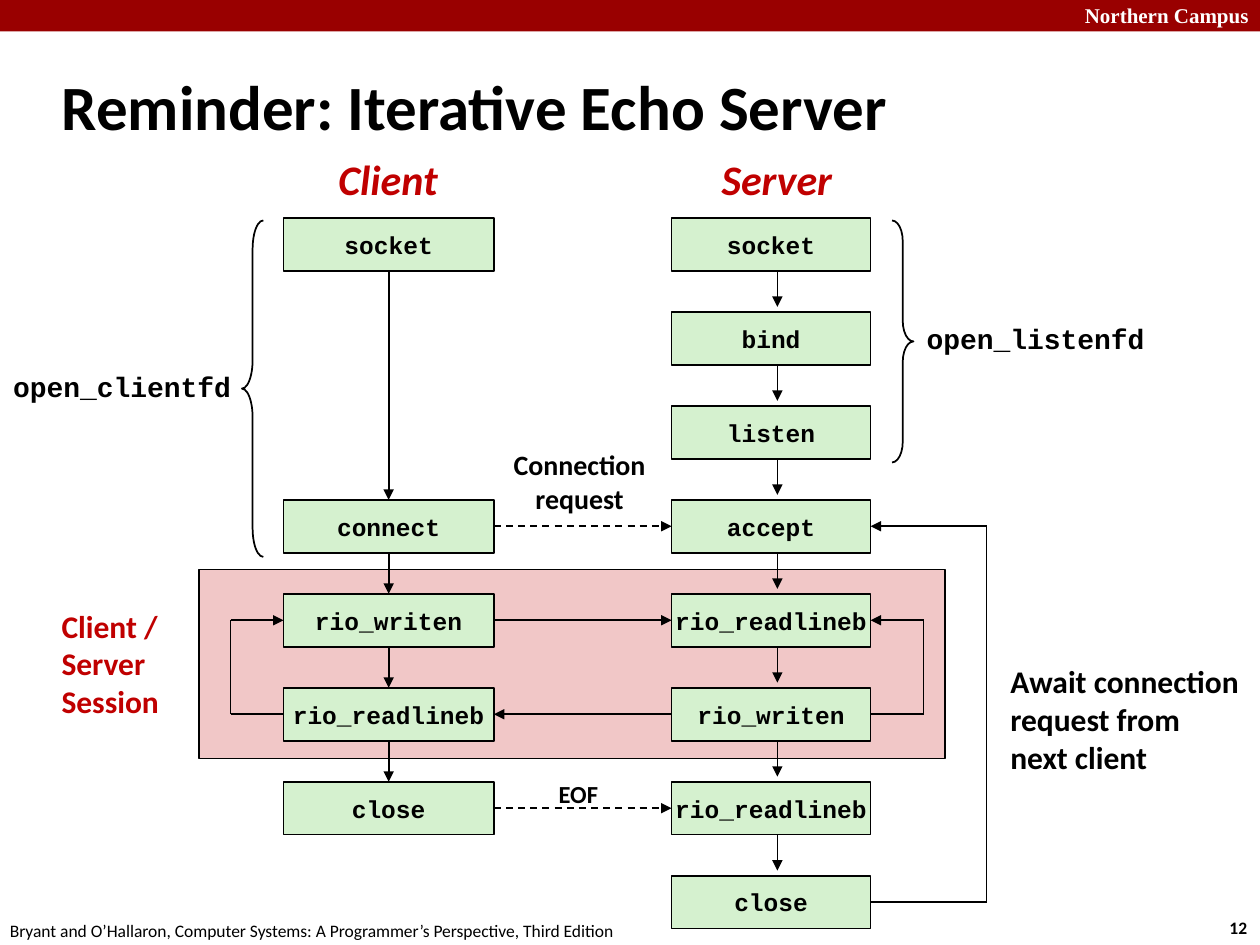
import pptx
import pptx.util
import pptx.oxml.ns
from lxml import etree
from pptx.dml.color import RGBColor
from pptx.enum.dml import MSO_LINE
from pptx.enum.shapes import MSO_CONNECTOR, MSO_SHAPE
from pptx.enum.text import MSO_ANCHOR, PP_ALIGN

BLACK = RGBColor(0x00, 0x00, 0x00)
WHITE = RGBColor(0xFF, 0xFF, 0xFF)
BANNER_RED = RGBColor(0x99, 0x00, 0x00)
RED = RGBColor(0xC0, 0x00, 0x00)
PINK = RGBColor(0xF1, 0xC7, 0xC7)
GREEN = RGBColor(0xD5, 0xF1, 0xCF)
SANS, MONO, SERIF = "Calibri", "Courier New", "Times New Roman"
LEFT, CENTER, RIGHT = PP_ALIGN.LEFT, PP_ALIGN.CENTER, PP_ALIGN.RIGHT

TITLE = "Reminder: Iterative Echo Server"
CLIENT = {0: "socket", 3: "connect", 4: "rio_writen", 5: "rio_readlineb", 6: "close"}
SERVER = dict(enumerate(["socket", "bind", "listen", "accept", "rio_readlineb",
                         "rio_writen", "rio_readlineb", "close"]))
MESSAGES = [("client", "server", 3, True), ("client", "server", 4, False),
            ("server", "client", 5, False), ("client", "server", 6, True)]
LOOPS = [("client", 5, 4, 1.83), ("server", 5, 4, 7.33), ("server", 7, 3, 7.83)]
BRACES = [(MSO_SHAPE.LEFT_BRACE, (1.92, 1.75, 0.17, 2.67), 1.33),
          (MSO_SHAPE.RIGHT_BRACE, (7.08, 1.75, 0.17, 1.92), 0.96)]
LABELS = [
    ("Northern Campus", (8.01, -0.03, 2, 0.3), 12, SERIF, WHITE, RIGHT),
    ("12", (9.66, 7.23, 0.37, 0.27), 10, SANS, BLACK, LEFT),
    ("Client / Server\nSession", (0.39, 4.76, 1.03, 1.01), 18, SANS, RED, LEFT),
    ("Client", (2.58, 1.17, 1, 0.5), 24, SANS, RED, CENTER),
    ("Server", (5.62, 1.17, 1.09, 0.5), 24, SANS, RED, CENTER),
    ("Connection\nrequest", (3.97, 3.5, 1.26, 0.64), 16, SANS, BLACK, CENTER),
    ("EOF", (4.33, 6.13, 0.52, 0.34), 14, SANS, BLACK, CENTER),
    ("Await connection\nrequest from\nnext client", (7.92, 5.2, 2.03, 1.01),
     18, SANS, BLACK, LEFT),
    ("open_listenfd", (7.25, 2.5, 1.94, 0.37), 16, MONO, BLACK, CENTER),
    ("open_clientfd", (0, 2.88, 1.94, 0.37), 16, MONO, BLACK, CENTER),
]
FOOTER = ("Bryant and O’Hallaron, Computer Systems: "
          "A Programmer’s Perspective, Third Edition")
COLUMNS = {"client": (2.25, 1.67, CLIENT), "server": (5.33, 1.58, SERVER)}
ROW_TOP, ROW_PITCH, BOX_H = 1.73, 5.22 / 7, 0.42
SERVER_ARROW_X, ARROW_GAP = 6.17, 0.04

prs = pptx.Presentation()
prs.slide_width, prs.slide_height = pptx.util.Inches(10), pptx.util.Inches(7.5)
s = prs.slides.add_slide(prs.slide_layouts[5])


def inches(values):
    return [pptx.util.Inches(v) for v in values]


def write(sp, text, size, font, color, align, bold=True, italic=False, wrap=False):
    tf = sp.text_frame
    tf.text = text
    tf.word_wrap = wrap
    tf.vertical_anchor = MSO_ANCHOR.MIDDLE
    for p in tf.paragraphs:
        p.alignment = align
        for r in p.runs:
            r.font.size, r.font.name = pptx.util.Pt(size), font
            r.font.bold, r.font.italic = bold, italic
            r.font.color.rgb = color


def add_shape(kind, box, fill=None, outlined=True):
    sp = s.shapes.add_shape(kind, *inches(box))
    sp.shadow.inherit = False
    if fill is None:
        sp.fill.background()
    else:
        sp.fill.solid()
        sp.fill.fore_color.rgb = fill
    if outlined:
        sp.line.color.rgb, sp.line.width = BLACK, pptx.util.Pt(1)
    else:
        sp.line.fill.background()
    return sp


def add_line(start, end, arrow=True, dashed=False, begin=None, finish=None):
    c = s.shapes.add_connector(MSO_CONNECTOR.STRAIGHT, *inches(start + end))
    c.line.color.rgb, c.line.width = BLACK, pptx.util.Pt(1)
    if dashed:
        c.line.dash_style = MSO_LINE.DASH
    if arrow:
        tail = etree.SubElement(c.line._get_or_add_ln(), pptx.oxml.ns.qn("a:tailEnd"))
        tail.set("type", "triangle")
    etree.SubElement(c._element.spPr, pptx.oxml.ns.qn("a:effectLst"))
    if begin:
        c.begin_connect(*begin)
    if finish:
        c.end_connect(*finish)


def row_top(row):
    return ROW_TOP + row * ROW_PITCH


def side(name, row, right):
    x, w, _ = COLUMNS[name]
    return (x + w * right, row_top(row) + BOX_H / 2)


title = s.shapes.title
title.left, title.top, title.width, title.height = inches((0.39, 0.42, 8.3, 0.83))
write(title, TITLE, 36, SANS, BLACK, LEFT, wrap=True)

add_shape(MSO_SHAPE.RECTANGLE, (0, 0, 10, 0.25), BANNER_RED, outlined=False)
add_shape(MSO_SHAPE.RECTANGLE, (1.58, 4.52, 5.92, 1.5), PINK)

boxes = {}
for name, (x, w, calls) in COLUMNS.items():
    for row, call in calls.items():
        sp = add_shape(MSO_SHAPE.RECTANGLE, (x, row_top(row), w, BOX_H), GREEN)
        write(sp, call, 14, MONO, BLACK, CENTER)
        boxes[name, row] = sp

client_rows = list(CLIENT)
client_x = COLUMNS["client"][0] + COLUMNS["client"][1] / 2
for a, b in zip(client_rows, client_rows[1:]):
    add_line((client_x, row_top(a) + BOX_H), (client_x, row_top(b)),
             begin=(boxes["client", a], 2), finish=(boxes["client", b], 0))
for row in range(len(SERVER) - 1):
    add_line((SERVER_ARROW_X, row_top(row) + BOX_H),
             (SERVER_ARROW_X, row_top(row + 1) - ARROW_GAP))

for source, target, row, dashed in MESSAGES:
    rightward = source == "client"
    add_line(side(source, row, rightward), side(target, row, not rightward), dashed=dashed,
             begin=(boxes[source, row], 3 if rightward else 1),
             finish=(boxes[target, row], 1 if rightward else 3))

for name, low, high, turn_x in LOOPS:
    right = name == "server"
    site = 3 if right else 1
    start, end = side(name, low, right), side(name, high, right)
    corner_low, corner_high = (turn_x, start[1]), (turn_x, end[1])
    add_line(start, corner_low, arrow=False, begin=(boxes[name, low], site))
    add_line(corner_low, corner_high, arrow=False)
    add_line(corner_high, end, finish=(boxes[name, high], site))

for kind, box, curl in BRACES:
    add_shape(kind, box).adjustments[0] = curl

for text, box, size, font, color, align in LABELS:
    sp = s.shapes.add_textbox(*inches(box))
    write(sp, text, size, font, color, align, italic=size == 24,
          wrap=text.startswith("Client /"))
footer = s.shapes.add_textbox(*inches((-0.02, 7.25, 5.08, 0.27)))
write(footer, FOOTER, 10, SANS, BLACK, LEFT, bold=False)

prs.save("out.pptx")
